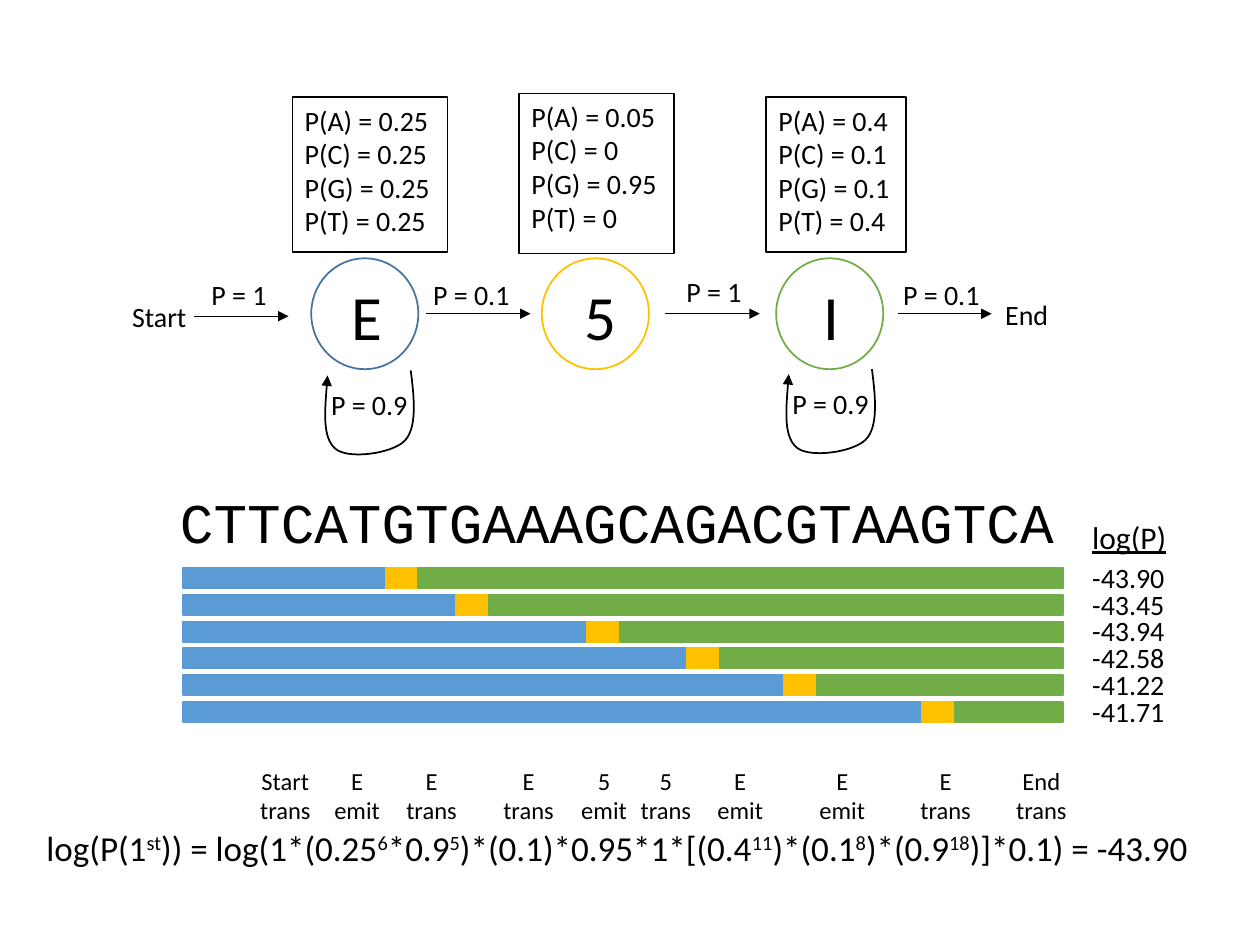
from dataclasses import dataclass

from lxml.etree import SubElement
from pptx import Presentation
from pptx.dml.color import RGBColor
from pptx.enum.shapes import MSO_CONNECTOR, MSO_SHAPE
from pptx.enum.text import MSO_AUTO_SIZE, PP_ALIGN
from pptx.oxml.ns import qn
from pptx.util import Inches, Pt

BLACK = RGBColor(0x00, 0x00, 0x00)
NAVY = RGBColor(0x43, 0x73, 0x9E)
BLUE = RGBColor(0x5B, 0x9B, 0xD5)
YELLOW = RGBColor(0xFF, 0xC0, 0x00)
GREEN = RGBColor(0x70, 0xAD, 0x47)

# Name, circle left, colour, letter (left, width), emission box, loop shift, P values
STATES = [
    ("E", 15.7, NAVY, (2.2, 4.6), (-1.5, -12.8, 12.3, 12.3), (0, 0),
     ("0.25", "0.25", "0.25", "0.25")),
    ("5", 34, YELLOW, (2.4, 4.7), (-1.8, -13.1, 12.3, 12.7), None,
     ("0.05", "0", "0.95", "0")),
    ("I", 52.6, GREEN, (2.8, 3.4), (-0.8, -12.8, 11.1, 12.3), (-0.3, -0.1),
     ("0.4", "0.1", "0.1", "0.4")),
]
# Arrow start, end and row, then label, its left, top and width
TRANSITIONS = [
    (6.4, 13.9, 18.1, "P = 1", 6.8, 14.5, 6.6),
    (24.8, 33.1, 17.9, "P = 0.1", 24.4, 14.5, 8.3),
    (43.8, 51.3, 17.9, "P = 1", 44.5, 14.3, 6.6),
    (62.3, 69.7, 17.9, "P = 0.1", 61.7, 14.5, 8.3),
]
# Start point, then three cubic curves of three points each
LOOP = [(7.9, 8.9), (8.2, 11.2), (8.4, 13.5), (7.4, 14.5), (6.4, 15.5),
        (2.9, 16), (1.9, 15.1), (0.9, 14.2), (1.1, 11.8), (1.3, 9.3)]
# Width of the E part and log(P)
PARSES = [(16.1, "-43.90"), (21.7, "-43.45"), (32.1, "-43.94"),
          (40, "-42.58"), (47.7, "-41.22"), (58.7, "-41.71")]
TERMS = [("Start\ntrans", 22.65), ("E\nemit", 28.35), ("E\ntrans", 34.25),
         ("E\ntrans", 41.95), ("5\nemit", 47.95), ("5\ntrans", 52.85),
         ("E\nemit", 58.75), ("E\nemit", 66.85), ("E\ntrans", 75.05),
         ("End\ntrans", 82.65)]
FORMULA = ("log(P(1^st^)) = log(1*(0.25^6^*0.9^5^)*(0.1)*0.95*1*"
           "[(0.4^11^)*(0.1^8^)*(0.9^18^)]*0.1) = -43.90")


def cells(count):
    """Length of grid cells; the slide has 100 columns and 75 rows."""
    return Inches(count / 10)


@dataclass
class Box:
    left: float
    top: float
    width: float
    height: float

    def inside(self, left, top, width, height):
        return Box(self.left + left, self.top + top, width, height)

    def point(self, column, row):
        return cells(self.left + column), cells(self.top + row)

    def frame(self):
        return [cells(n) for n in (self.left, self.top, self.width, self.height)]


def add_text(page, box, text, size=16, font="Calibri", align=PP_ALIGN.LEFT,
             underline=None, border=None):
    """Add text with one paragraph a line; parts between ^ marks are raised."""
    shape = page.shapes.add_textbox(*box.frame())
    frame = shape.text_frame
    frame.word_wrap = False
    frame.auto_size = MSO_AUTO_SIZE.SHAPE_TO_FIT_TEXT
    if border is not None:
        shape.line.color.rgb = border
        shape.line.width = Pt(0.75)
    for number, line in enumerate(text.split("\n")):
        para = frame.add_paragraph() if number else frame.paragraphs[0]
        para.alignment = align
        for position, part in enumerate(line.split("^")):
            span = para.add_run()
            span.text = part
            span.font.size = Pt(size)
            span.font.name = font
            span.font.color.rgb = BLACK
            span.font.underline = underline
            if position % 2:
                span.font._element.set("baseline", "30000")


def add_shape(page, kind, box, line, fill=None):
    shape = page.shapes.add_shape(kind, *box.frame())
    shape.shadow.inherit = False
    shape.line.color.rgb = line
    shape.line.width = Pt(1)
    if fill is None:
        shape.fill.background()
    else:
        shape.fill.solid()
        shape.fill.fore_color.rgb = fill


def finish_arrow(shape, width):
    shape.line.color.rgb = BLACK
    shape.line.width = Pt(width)
    SubElement(shape.line._get_or_add_ln(), qn("a:tailEnd"), type="triangle")


def add_arrow(page, start, end):
    arrow = page.shapes.add_connector(MSO_CONNECTOR.STRAIGHT, *start, *end)
    finish_arrow(arrow, 0.5)
    SubElement(arrow._element.spPr, qn("a:effectLst"))


def add_loop(page, box):
    points = [box.point(*point) for point in LOOP]
    builder = page.shapes.build_freeform(*points[0])
    builder.add_line_segments(points[1:], close=False)
    loop = builder.convert_to_shape()
    loop.shadow.inherit = False
    loop.fill.background()
    finish_arrow(loop, 1)
    outline = next(loop._element.iter(qn("a:path")))
    segments = outline.findall(qn("a:lnTo"))
    for first in range(0, len(segments), 3):
        curve = SubElement(outline, qn("a:cubicBezTo"))
        for segment in segments[first:first + 3]:
            curve.append(segment[0])
            outline.remove(segment)


def draw_state(page, box, name, color, letter, emission, loop, values):
    add_shape(page, MSO_SHAPE.OVAL, box, color)
    left, width = letter
    add_text(page, box.inside(left, 1, width, 7.4), name, size=36)
    lines = [f"P({base}) = {value}" for base, value in zip("ACGT", values)]
    add_text(page, box.inside(*emission), "\n".join(lines), border=BLACK)
    if loop is not None:
        around = box.inside(*loop, box.width, box.height)
        add_loop(page, around)
        add_text(page, around.inside(0.6, 9.8, 8.3, 3.9), "P = 0.9")


def draw_model(page, box):
    for name, left, *details in STATES:
        draw_state(page, box.inside(left, 13.5, 8.5, 8.8), name, *details)
    for start, end, row, label, left, top, width in TRANSITIONS:
        add_arrow(page, box.point(start, row), box.point(end, row))
        add_text(page, box.inside(left, top, width, 3.9), label)
    add_text(page, box.inside(0.5, 16.3, 6.5, 3.9), "Start")
    add_text(page, box.inside(69.8, 16.1, 5.6, 3.9), "End")


def draw_parses(page, box):
    """Draw the sequence, and below it one bar and log(P) for each parse."""
    add_text(page, box.inside(0, 0, 72.2, 6.4), "CTTCATGTGAAAGCAGACGTAAGTCA",
             size=32, font="Courier New")
    add_text(page, box.inside(72.4, 2.4, 8, 4), "log(P)", size=18, underline=True)
    bar_left, bar_width, site_width, pitch = 1.2, 69.9, 2.6, 2.12
    for row, (exon, score) in enumerate(PARSES):
        left, top = bar_left, 6.9 + row * pitch
        intron = bar_width - exon - site_width
        for width, color in ((exon, BLUE), (site_width, YELLOW), (intron, GREEN)):
            add_shape(page, MSO_SHAPE.RECTANGLE,
                      box.inside(left, top, width, 1.6), color, fill=color)
            left += width
        add_text(page, box.inside(72.4, top - 1.1, 7.8, 3.7), score)


def draw_formula(page, box):
    for label, center in TERMS:
        width = 6.1 if label.endswith("trans") else 5.7
        add_text(page, box.inside(center - box.left - width / 2, 0, width, 5.7),
                 label, size=14, align=PP_ALIGN.CENTER)
    add_text(page, box.inside(0, 4.8, box.width, 4.4), FORMULA, size=20)


def main():
    deck = Presentation()
    deck.slide_width, deck.slide_height = cells(100), cells(75)
    page = deck.slides.add_slide(deck.slide_layouts[6])
    draw_model(page, Box(9, 7, 76, 30))
    draw_parses(page, Box(13.3, 38.2, 80.4, 19.1))
    draw_formula(page, Box(2.7, 60.3, 94.4, 9.2))
    deck.save("out.pptx")


if __name__ == "__main__":
    main()
